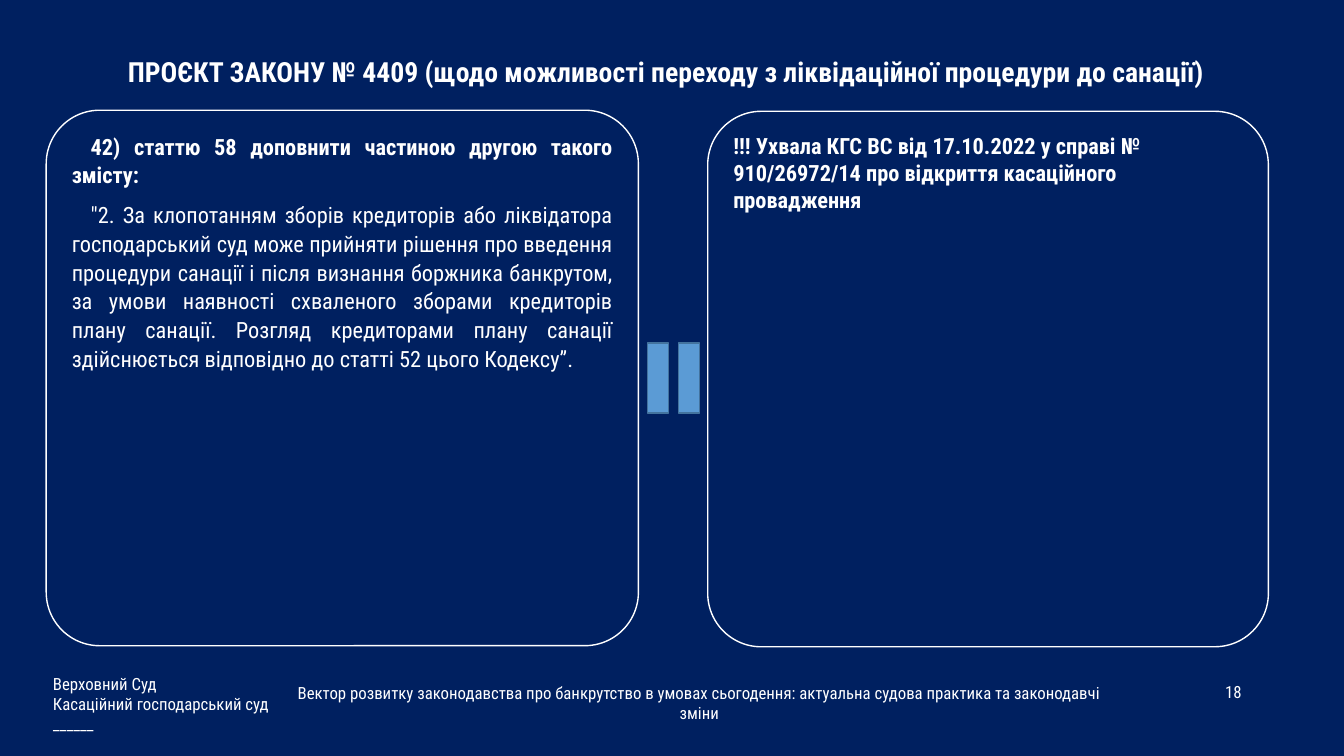
from dataclasses import dataclass

from pptx import Presentation
from pptx.dml.color import RGBColor
from pptx.enum.shapes import MSO_SHAPE
from pptx.enum.text import MSO_ANCHOR, PP_ALIGN
from pptx.shapes.autoshape import Shape
from pptx.slide import Slide
from pptx.text.text import TextFrame
from pptx.util import Emu, Pt

PX = 9525
FONT = "Roboto Condensed"
COLORS = {
    "navy": "002060",
    "white": "FFFFFF",
    "blue": "5B9BD5",
    "blue_edge": "43739E",
}


@dataclass(frozen=True)
class Box:
    left: int
    top: int
    width: int
    height: int

    def emu(self) -> tuple[Emu, Emu, Emu, Emu]:
        return (Emu(self.left * PX), Emu(self.top * PX),
                Emu(self.width * PX), Emu(self.height * PX))


@dataclass(frozen=True)
class Line:
    text: str
    bold: bool = False


@dataclass(frozen=True)
class Caption:
    box: Box
    lines: tuple[Line, ...]
    size: float = 12
    align: PP_ALIGN = PP_ALIGN.LEFT


@dataclass(frozen=True)
class Panel:
    box: Box
    lines: tuple[Line, ...]
    align: PP_ALIGN = PP_ALIGN.LEFT
    indent: int = 0
    spacing: float = 1.0
    space_after: int = 0


CAPTIONS = (
    Caption(
        Box(41, 42, 1186, 52),
        (Line("ПРОЄКТ ЗАКОНУ № 4409 (щодо можливості переходу з "
              "ліквідаційної процедури до санації)", bold=True),),
        size=19.8, align=PP_ALIGN.CENTER),
    Caption(Box(904, 643, 288, 32), (Line("18"),), align=PP_ALIGN.RIGHT),
    Caption(
        Box(41, 634, 244, 72),
        (Line("Верховний Суд"), Line("Касаційний господарський суд"),
         Line("______"))),
    Caption(
        Box(256, 646, 820, 47),
        (Line("Вектор розвитку законодавства про банкрутство в умовах "
              "сьогодення: актуальна судова практика та законодавчі зміни"),),
        align=PP_ALIGN.CENTER),
)

PANELS = (
    Panel(
        Box(44, 105, 564, 510),
        (Line("42) статтю 58 доповнити частиною другою такого змісту:",
              bold=True),
         Line("\"2. За клопотанням зборів кредиторів або ліквідатора "
              "господарський суд може прийняти рішення про введення "
              "процедури санації і після визнання боржника банкрутом, "
              "за умови наявності схваленого зборами кредиторів плану "
              "санації. Розгляд кредиторами плану санації здійснюється "
              "відповідно до статті 52 цього Кодексу”.")),
        align=PP_ALIGN.JUSTIFY, indent=18, spacing=1.07, space_after=8),
    Panel(
        Box(674, 106, 534, 510),
        (Line("!!! Ухвала КГС ВС від 17.10.2022 у справі № 910/26972/14 "
              "про відкриття касаційного провадження", bold=True),)),
)

EQUALS_SIGN = Box(596, 318, 91, 84)


def rgb(name: str) -> RGBColor:
    return RGBColor.from_string(COLORS[name])


def write(frame: TextFrame, lines: tuple[Line, ...], *, size: float,
          align: PP_ALIGN, anchor: MSO_ANCHOR, indent: int = 0,
          spacing: float = 1.0, space_after: int = 0) -> None:
    frame.word_wrap = True
    frame.vertical_anchor = anchor
    for index, line in enumerate(lines):
        paragraph = frame.add_paragraph() if index else frame.paragraphs[0]
        paragraph.alignment = align
        paragraph.line_spacing = spacing
        paragraph.space_after = Pt(space_after)
        if indent:
            paragraph._p.get_or_add_pPr().set("indent", str(indent * PX))
        run = paragraph.add_run()
        run.text = line.text
        run.font.name = FONT
        run.font.size = Pt(size)
        run.font.bold = line.bold
        run.font.color.rgb = rgb("white")


def draw_shape(slide: Slide, kind: MSO_SHAPE, box: Box,
               fill: str, edge: str) -> Shape:
    shape = slide.shapes.add_shape(kind, *box.emu())
    shape.shadow.inherit = False
    shape.fill.solid()
    shape.fill.fore_color.rgb = rgb(fill)
    shape.line.color.rgb = rgb(edge)
    shape.line.width = Pt(1)
    return shape


def draw_caption(slide: Slide, caption: Caption) -> None:
    frame = slide.shapes.add_textbox(*caption.box.emu()).text_frame
    write(frame, caption.lines, size=caption.size, align=caption.align,
          anchor=MSO_ANCHOR.MIDDLE)


def draw_panel(slide: Slide, panel: Panel) -> None:
    outline = draw_shape(slide, MSO_SHAPE.ROUNDED_RECTANGLE, panel.box,
                         "navy", "white")
    outline.adjustments[0] = 0.1
    write(outline.text_frame, panel.lines, size=16, align=panel.align,
          anchor=MSO_ANCHOR.TOP, indent=panel.indent,
          spacing=panel.spacing, space_after=panel.space_after)


def main() -> None:
    deck = Presentation()
    deck.slide_width = Emu(1280 * PX)
    deck.slide_height = Emu(720 * PX)
    slide = deck.slides.add_slide(deck.slide_layouts[6])
    slide.background.fill.solid()
    slide.background.fill.fore_color.rgb = rgb("navy")

    for panel in PANELS:
        draw_panel(slide, panel)
    equals_sign = draw_shape(slide, MSO_SHAPE.MATH_EQUAL, EQUALS_SIGN,
                             "blue", "blue_edge")
    equals_sign.rotation = 90
    for caption in CAPTIONS:
        draw_caption(slide, caption)

    deck.save("out.pptx")


if __name__ == "__main__":
    main()
